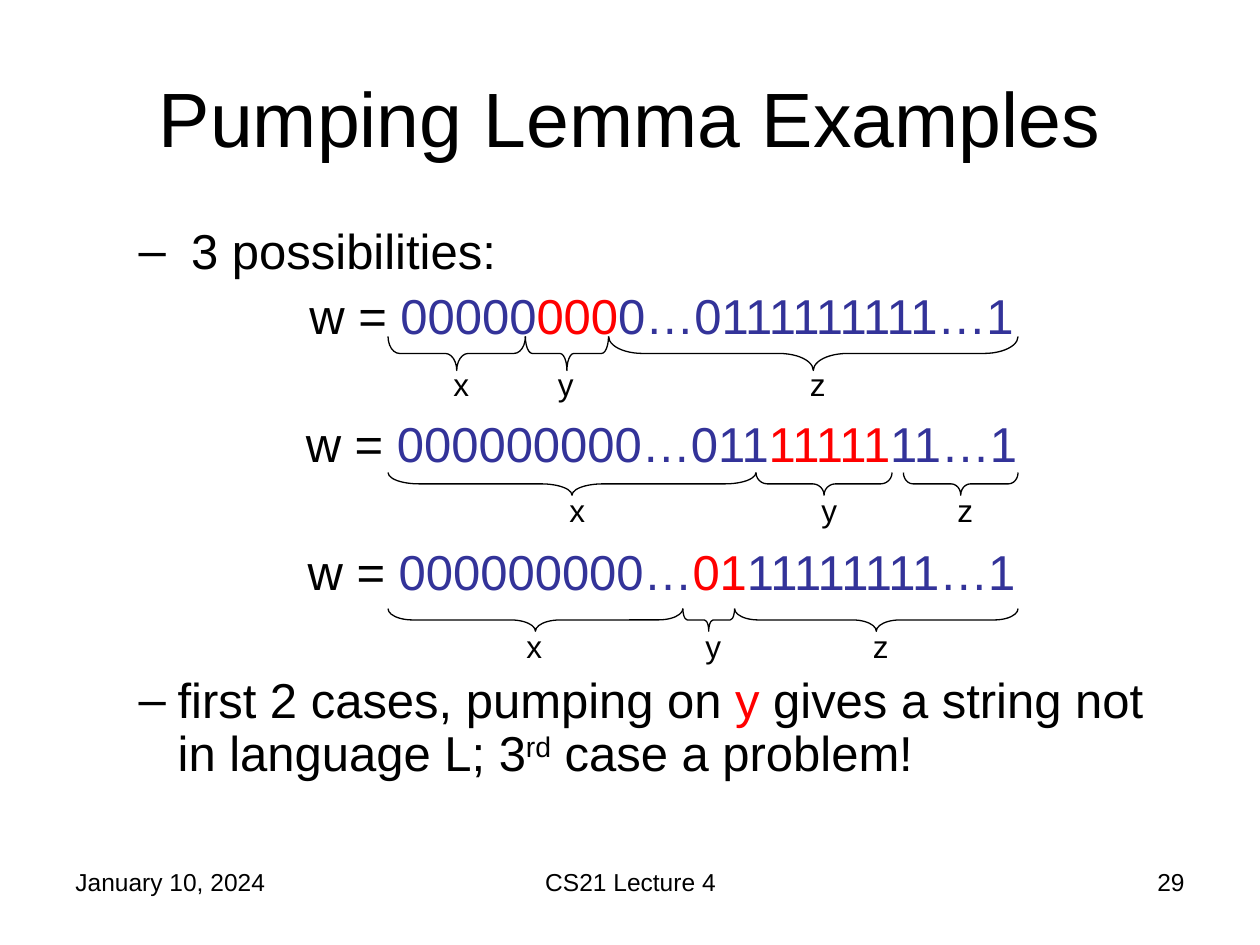
from lxml.etree import SubElement
from pptx import Presentation
from pptx.dml.color import RGBColor
from pptx.enum.shapes import MSO_SHAPE
from pptx.enum.text import MSO_ANCHOR, MSO_AUTO_SIZE, PP_ALIGN
from pptx.oxml.ns import qn
from pptx.util import Inches, Pt

BLACK, BLUE, RED = "000000", "333399", "FF0000"
LEFT, CENTER, RIGHT = PP_ALIGN.LEFT, PP_ALIGN.CENTER, PP_ALIGN.RIGHT
STRING_START, STRING_END = 3.08, 8.08

INTRO = [(" 3 possibilities:", BLACK)]
CASES = [
    [("w = ", BLACK), ("00000", BLUE), ("000", RED), ("0…0111111111…1", BLUE)],
    [("w = ", BLACK), ("000000000…011", BLUE), ("11111", RED), ("11…1", BLUE)],
    [("w = ", BLACK), ("000000000…", BLUE), ("01", RED), ("11111111…1", BLUE)],
]
CONCLUSION = [
    ("first 2 cases, pumping on ", BLACK), ("y", RED),
    (" gives a string not in language L; 3", BLACK),
    ("rd", BLACK, 30), (" case a problem!", BLACK),
]
SPLITS = [
    {"top": 2.67, "depth": 0.27, "label_top": 2.85,
     "parts": [("x", STRING_START, 4.17, 3.5), ("y", 4.17, 4.83, 4.33),
               ("z", 4.83, STRING_END, 6.33)]},
    {"top": 3.75, "depth": 0.18, "label_top": 3.85,
     "parts": [("x", STRING_START, 6, 4.42), ("y", 6, 7.08, 6.42),
               ("z", 7.17, STRING_END, 7.5)]},
    {"top": 4.83, "depth": 0.18, "label_top": 4.93,
     "parts": [("x", STRING_START, 5.42, 4.08), ("y", 5.42, 5.83, 5.5),
               ("z", 5.83, STRING_END, 6.83)]},
]
FOOTERS = [("January 10, 2024", 0.5, 2.33, LEFT),
           ("CS21 Lecture 4", 3.42, 3.17, CENTER),
           ("29", 7.17, 2.33, RIGHT)]


def color(value):
    """Turn a hex string into a colour."""
    return RGBColor.from_string(value)


def place(shape, left, top, width, height):
    """Move a shape to a box given in inches."""
    box = {"left": left, "top": top, "width": width, "height": height}
    for side, length in box.items():
        setattr(shape, side, Inches(length))


def add_run(paragraph, text, size, hue=BLACK, baseline=0):
    """Add one formatted run, raised by a percentage if asked."""
    run = paragraph.add_run()
    run.text = text
    for name, value in {"name": "Arial", "size": Pt(size)}.items():
        setattr(run.font, name, value)
    run.font.color.rgb = color(hue)
    if baseline:
        run.font._element.set("baseline", str(baseline * 1000))


def add_label(slide, text, box, size, alignment=LEFT):
    """Add a single-line text box."""
    label = slide.shapes.add_textbox(*map(Inches, box))
    label.text_frame.word_wrap = True
    paragraph = label.text_frame.paragraphs[0]
    paragraph.alignment = alignment
    add_run(paragraph, text, size)


def fill_title(title, box):
    """Place and fill the title."""
    place(title, *box)
    title.text_frame.vertical_anchor = MSO_ANCHOR.MIDDLE
    paragraph = title.text_frame.paragraphs[0]
    paragraph.alignment = CENTER
    add_run(paragraph, "Pumping Lemma Examples", 44)


def add_item(paragraph, runs, alignment, space, bullet):
    """Fill one body paragraph with coloured runs."""
    look = {"level": 1, "alignment": alignment, "line_spacing": 0.9,
            "space_before": Pt(space)}
    for name, value in look.items():
        setattr(paragraph, name, value)
    properties = paragraph._p.get_or_add_pPr()
    properties.set("marL", str(Inches(0.81)))
    properties.set("indent", str(Inches(-0.31)))
    if bullet:
        SubElement(properties, qn("a:buChar")).set("char", bullet)
    else:
        SubElement(properties, qn("a:buNone"))
    for text, hue, *baseline in runs:
        add_run(paragraph, text, 28, hue, *baseline)


def fill_body(body, box):
    """Place the body and list the three cases, with room for braces."""
    place(body, *box)
    frame = body.text_frame
    frame.auto_size = MSO_AUTO_SIZE.NONE
    gap, brace_gap = 7, 43
    add_item(frame.paragraphs[0], INTRO, LEFT, gap, "–")
    for index, case in enumerate(CASES):
        space = brace_gap if index else gap
        add_item(frame.add_paragraph(), case, CENTER, space, None)
    add_item(frame.add_paragraph(), CONCLUSION, LEFT, brace_gap, "–")


def add_brace(slide, left, top, length, depth):
    """Add a brace that opens upward and fills the given box."""
    middle_x, middle_y = left + length / 2, top + depth / 2
    brace = slide.shapes.add_shape(
        MSO_SHAPE.LEFT_BRACE,
        Inches(middle_x - depth / 2), Inches(middle_y - length / 2),
        Inches(depth), Inches(length))
    brace.rotation = 270
    brace.adjustments[0] = length / depth / 12
    brace.shadow.inherit = False
    brace.fill.background()
    brace.line.color.rgb = color(BLACK)
    brace.line.width = Pt(0.75)


def add_split(slide, top, depth, label_top, parts):
    """Mark the x, y and z parts of one string."""
    for name, start, end, label_left in parts:
        add_brace(slide, start, top, end - start, depth)
        add_label(slide, name, (label_left, label_top, 0.42, 0.4), 18)


def add_footer(slide, top, height):
    """Add the date, lecture and page number."""
    for text, left, width, alignment in FOOTERS:
        add_label(slide, text, (left, top, width, height), 14, alignment)


def main():
    """Build and save the slide."""
    deck = Presentation()
    deck.slide_width, deck.slide_height = Inches(10), Inches(7.5)
    slide = deck.slides.add_slide(deck.slide_layouts[1])
    fill_title(slide.shapes.title, (0.5, 0.3, 9, 1.25))
    fill_body(slide.placeholders[1], (0.5, 1.75, 9, 4.95))
    for split in SPLITS:
        add_split(slide, **split)
    add_footer(slide, 6.83, 0.52)
    deck.save("out.pptx")


if __name__ == "__main__":
    main()
